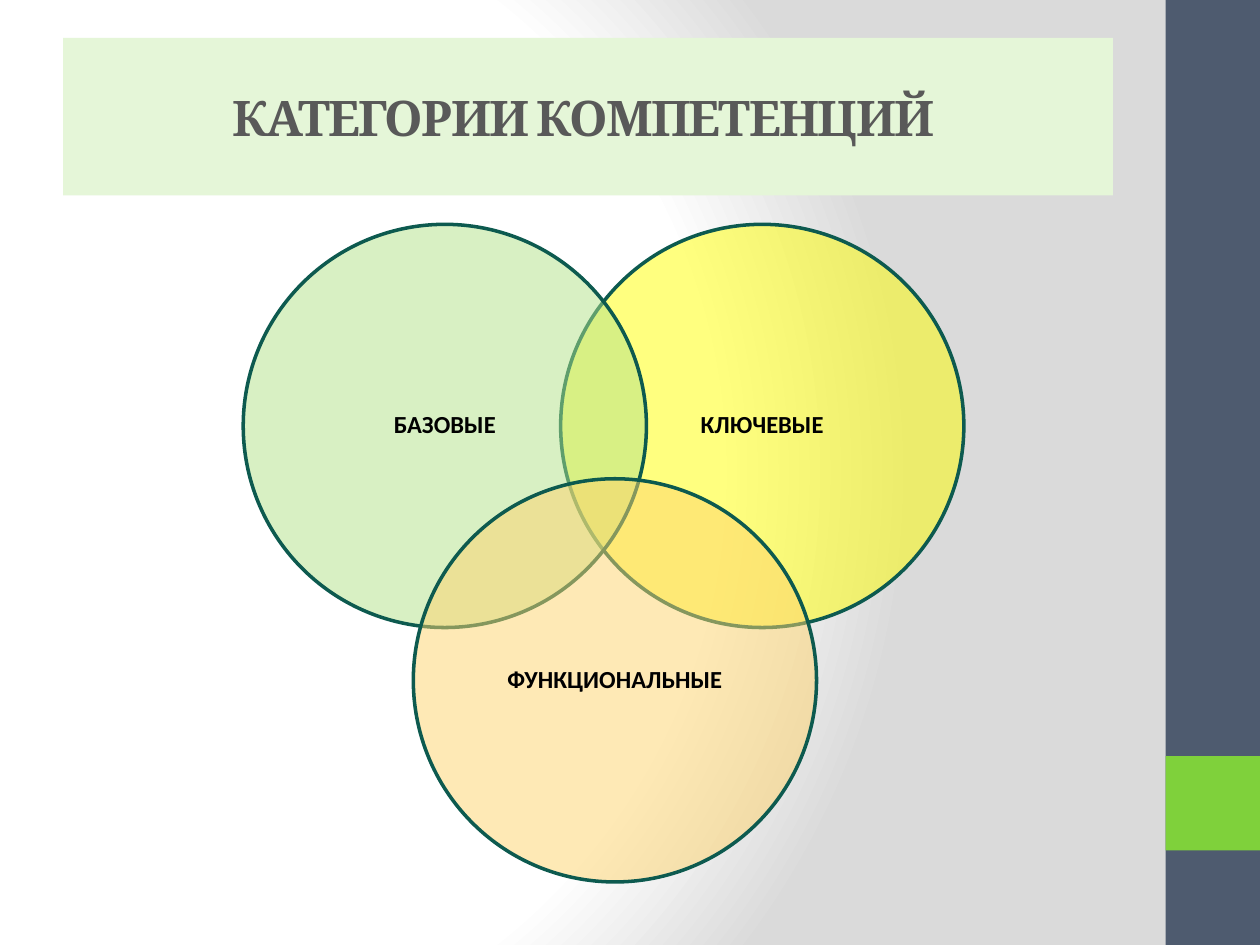
"""Build a slide with a three-circle diagram of competence categories."""
from pptx import Presentation
from pptx import oxml
from pptx import util as u
from pptx.dml import color
from pptx.enum import shapes, text
from pptx.oxml import ns


def rgb(value):
    """Turn a hex string into a colour."""
    return color.RGBColor.from_string(value)


class Slide:
    """Hold the style and the current slide."""

    outline, ink, heading = "0D5A4F", "000000", "595959"

    def __init__(self, page):
        """Keep the slide to draw on."""
        self.page = page

    def backdrop(self, stops, focus):
        """Fill the background with a circular gradient around a focus."""
        marks = "".join(
            f'<a:gs pos="{place * 1000}"><a:srgbClr val="{shade}"/></a:gs>'
            for place, shade in stops)
        left, top, right, bottom = (side * 1000 for side in focus)
        self.page.element.cSld.insert(0, oxml.parse_xml(
            f'<p:bg {ns.nsdecls("p", "a")}><p:bgPr><a:gradFill rotWithShape="1">'
            f'<a:gsLst>{marks}</a:gsLst><a:path path="circle">'
            f'<a:fillToRect l="{left}" t="{top}" r="{right}" b="{bottom}"/>'
            '</a:path></a:gradFill><a:effectLst/></p:bgPr></p:bg>'))

    def paint(self, box, fill, alpha=100):
        """Fill a shape, optionally with transparency."""
        box.fill.solid()
        box.fill.fore_color.rgb = rgb(fill)
        if alpha < 100:
            tone = box.element.spPr.find(".//" + ns.qn("a:srgbClr"))
            tone.append(oxml.parse_xml(
                f'<a:alpha {ns.nsdecls("a")} val="{alpha * 1000}"/>'))

    def label(self, box, words, font, size, ink):
        """Put one bold centred paragraph in a shape."""
        frame = box.text_frame
        frame.text = words
        frame.word_wrap = True
        frame.auto_size = text.MSO_AUTO_SIZE.NONE
        frame.vertical_anchor = text.MSO_ANCHOR.MIDDLE
        para = frame.paragraphs[0]
        para.alignment = text.PP_ALIGN.CENTER
        para.font.name, para.font.size, para.font.bold = font, u.Pt(size), True
        para.font.color.rgb = rgb(ink)
        return para

    def shape(self, kind, place, fill, alpha=100):
        """Add a filled shape without line or shadow."""
        box = self.page.shapes.add_shape(kind, *map(u.Pt, place))
        box.shadow.inherit = False
        box.line.fill.background()
        self.paint(box, fill, alpha)
        return box

    def bar(self, place, fill):
        """Add a plain rectangle."""
        self.shape(shapes.MSO_SHAPE.RECTANGLE, place, fill)

    def title(self, words, place, fill):
        """Place and format the title."""
        box = self.page.shapes.title
        box.left, box.top, box.width, box.height = map(u.Pt, place)
        self.paint(box, fill)
        para = self.label(box, words, "Cambria", 28, self.heading)
        para.runs[0]._r.get_or_add_rPr().set("spc", "-100")

    def circle(self, words, left, top, size, fill):
        """Add a half-transparent labelled circle."""
        box = self.shape(shapes.MSO_SHAPE.OVAL, (left, top, size, size), fill, 50)
        box.line.color.rgb = rgb(self.outline)
        box.line.width = u.Pt(2)
        frame = box.text_frame
        frame.margin_left = frame.margin_right = u.Pt(13)
        frame.margin_top = frame.margin_bottom = u.Pt(1.5)
        self.label(box, words, "Calibri", 14, self.ink).line_spacing = 0.9


deck = Presentation()
deck.slide_width, deck.slide_height = u.Pt(720), u.Pt(540)
slide = Slide(deck.slides.add_slide(deck.slide_layouts[5]))
slide.backdrop([(0, "FFFFFF"), (75, "FFFFFF"), (100, "DADADA")], (20, 50, 100, 50))
slide.bar((666, 0, 54, 540), "4E5B6F")
slide.bar((666, 432, 54, 54), "7FD13B")
slide.title("КАТЕГОРИИ КОМПЕТЕНЦИЙ ", (36, 21.6, 600, 90), "E5F6D8")
for words, left, top, fill in (
        ("КЛЮЧЕВЫЕ", 320.4, 128.2, "FFFF00"),
        ("БАЗОВЫЕ", 139, 128.2, "B2E389"),
        ("ФУНКЦИОНАЛЬНЫЕ", 236.2, 273.6, "FED46C")):
    slide.circle(words, left, top, 230.4, fill)
deck.save("out.pptx")
